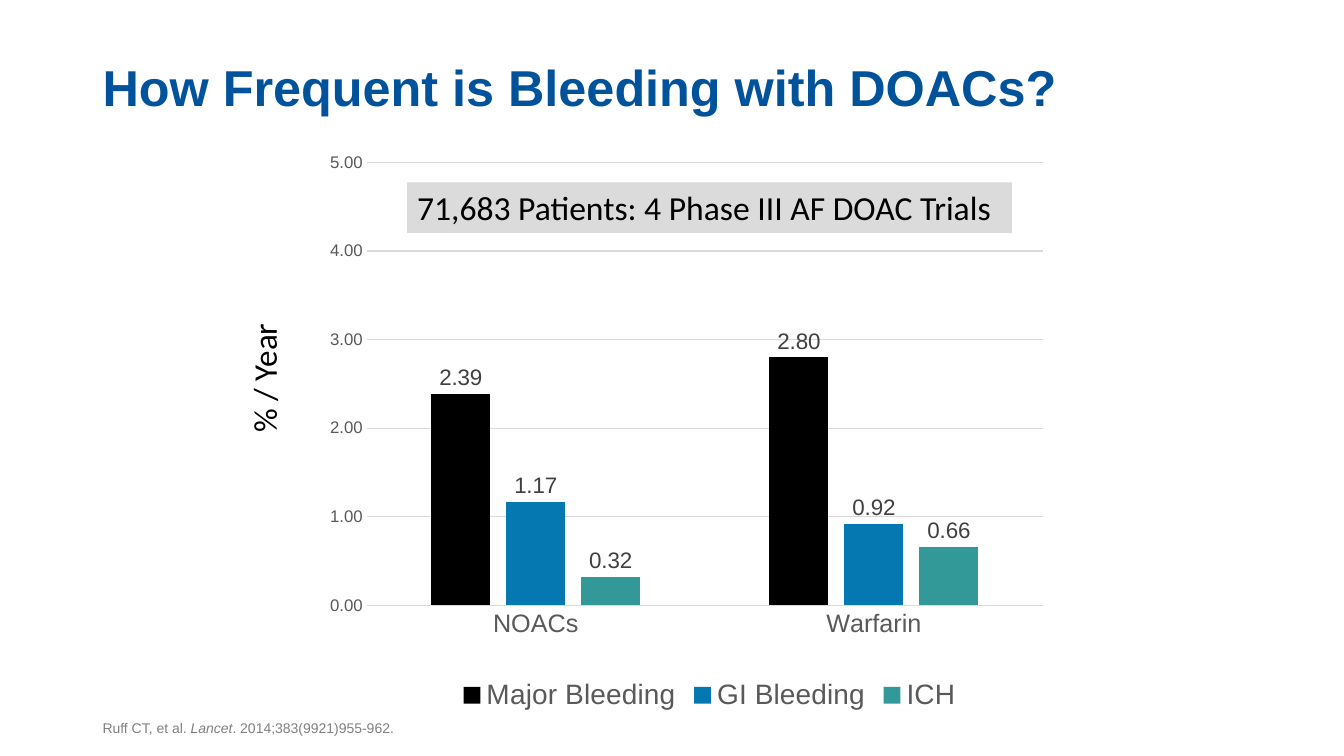
from lxml import etree
from pptx import Presentation
from pptx.chart.data import CategoryChartData
from pptx.dml.color import RGBColor
from pptx.enum import chart as charts, shapes, text
from pptx.oxml import ns
from pptx.util import Pt

COLORS = {
    "title": "00539B", "black": "000000", "citation": "808080", "banner": "DBDBDB",
    "axis_text": "595959", "label_text": "404040", "grid": "D9D9D9",
}
CATEGORIES = ["NOACs", "Warfarin"]
SERIES = [
    ("Major Bleeding", [2.39, 2.80], "000000"),
    ("GI Bleeding", [1.17, 0.92], "0577B1"),
    ("ICH", [0.32, 0.66], "339898"),
]
PLOT_AREA = {"x": 0.097, "y": 0.02, "w": 0.795, "h": 0.783}


def rgb(name):
    return RGBColor.from_string(COLORS[name])


def set_font(font, size, color, name="Arial"):
    font.name, font.size = name, Pt(size)
    font.color.rgb = rgb(color)


def fill_text(shape, runs, size, color, name="Arial", bold=False,
              anchor=text.MSO_ANCHOR.TOP, align=text.PP_ALIGN.LEFT):
    """Write one paragraph from (text, italic) runs and return it."""
    frame = shape.text_frame
    frame.word_wrap = True
    frame.vertical_anchor = anchor
    paragraph = frame.paragraphs[0]
    paragraph.alignment = align
    for words, italic in runs:
        run = paragraph.add_run()
        run.text = words
        set_font(run.font, size, color, name)
        run.font.bold, run.font.italic = bold, italic
    return paragraph


def add_text(slide, box, runs, size, color, **options):
    shape = slide.shapes.add_textbox(*map(Pt, box))
    return shape, fill_text(shape, runs, size, color, **options)


def add_title(slide, box):
    _, paragraph = add_text(slide, box, [("How Frequent is Bleeding with DOACs?", False)],
                            36, "title", bold=True, anchor=text.MSO_ANCHOR.BOTTOM)
    paragraph.line_spacing = 0.9


def add_citation(slide, box):
    runs = [("Ruff CT, et al. ", False), ("Lancet", True), (". 2014;383(9921)955-962.", False)]
    add_text(slide, box, runs, 10, "citation", anchor=text.MSO_ANCHOR.BOTTOM)


def set_plot_area(chart):
    """Fix the inner plot area as fractions of the chart."""
    plot_area = chart._chartSpace.chart.plotArea
    for old in plot_area.findall(ns.qn("c:layout")):
        plot_area.remove(old)
    layout = etree.Element(ns.qn("c:layout"))
    manual = etree.SubElement(layout, ns.qn("c:manualLayout"))
    settings = [("layoutTarget", "inner"), ("xMode", "edge"), ("yMode", "edge")]
    for tag, value in settings + list(PLOT_AREA.items()):
        etree.SubElement(manual, ns.qn("c:" + tag)).set("val", str(value))
    plot_area.insert(0, layout)


def style_axes(chart):
    category, value = chart.category_axis, chart.value_axis
    for axis, size in ((category, 18), (value, 12)):
        axis.major_tick_mark = axis.minor_tick_mark = charts.XL_TICK_MARK.NONE
        set_font(axis.tick_labels.font, size, "axis_text")
    value.minimum_scale, value.maximum_scale, value.major_unit = 0, 5, 1
    value.tick_labels.number_format = "0.00"
    value.tick_labels.number_format_is_linked = False
    value.format.line.fill.background()
    value.has_major_gridlines = True
    for line in (category.format.line, value.major_gridlines.format.line):
        line.color.rgb = rgb("grid")
        line.width = Pt(0.75)


def style_series(plot):
    plot.gap_width, plot.overlap = 219, -27
    plot.vary_by_categories = False
    for series, (_, _, color) in zip(plot.series, SERIES):
        series.format.fill.solid()
        series.format.fill.fore_color.rgb = RGBColor.from_string(color)
        series.invert_if_negative = False
        labels = series.data_labels
        labels.show_value = True
        labels.number_format, labels.number_format_is_linked = "0.00", False
        labels.position = charts.XL_LABEL_POSITION.OUTSIDE_END
        set_font(labels.font, 16, "label_text")


def add_bleeding_chart(slide, box):
    left, top, width, height = box

    # Columns
    data = CategoryChartData(number_format="0.00")
    data.categories = CATEGORIES
    for name, values, _ in SERIES:
        data.add_series(name, values)
    chart = slide.shapes.add_chart(charts.XL_CHART_TYPE.COLUMN_CLUSTERED,
                                   *map(Pt, box), data).chart
    set_font(chart.font, 10, "black")
    chart.has_title = False
    set_plot_area(chart)
    style_axes(chart)
    style_series(chart.plots[0])

    # Legend
    chart.has_legend = True
    chart.legend.position = charts.XL_LEGEND_POSITION.BOTTOM
    chart.legend.include_in_layout = False
    set_font(chart.legend.font, 20, "axis_text")

    # Axis title, turned to read upwards
    axis_box = (left - 176.4, top + 144, 324, 36)
    axis_title, _ = add_text(slide, axis_box, [("% / Year", False)], 23.6, "black",
                             name="Calibri", align=text.PP_ALIGN.CENTER)
    axis_title.rotation = 270

    # Banner over the plot
    banner = slide.shapes.add_shape(shapes.MSO_SHAPE.RECTANGLE,
                                    Pt(left + 87.9), Pt(top + 22.3), Pt(432), Pt(36))
    banner.shadow.inherit = False
    banner.fill.solid()
    banner.fill.fore_color.rgb = rgb("banner")
    banner.line.fill.background()
    fill_text(banner, [("71,683 Patients: 4 Phase III AF DOAC Trials", False)],
              24, "black", name="Calibri")


def main():
    presentation = Presentation()
    presentation.slide_width, presentation.slide_height = Pt(960), Pt(540)
    slide = presentation.slides.add_slide(presentation.slide_layouts[6])
    add_bleeding_chart(slide, (203, 108, 607.7, 404))
    add_title(slide, (66.2, 0, 828, 87.1))
    add_citation(slide, (66.2, 500.4, 828, 28.8))
    presentation.save("out.pptx")


if __name__ == "__main__":
    main()
